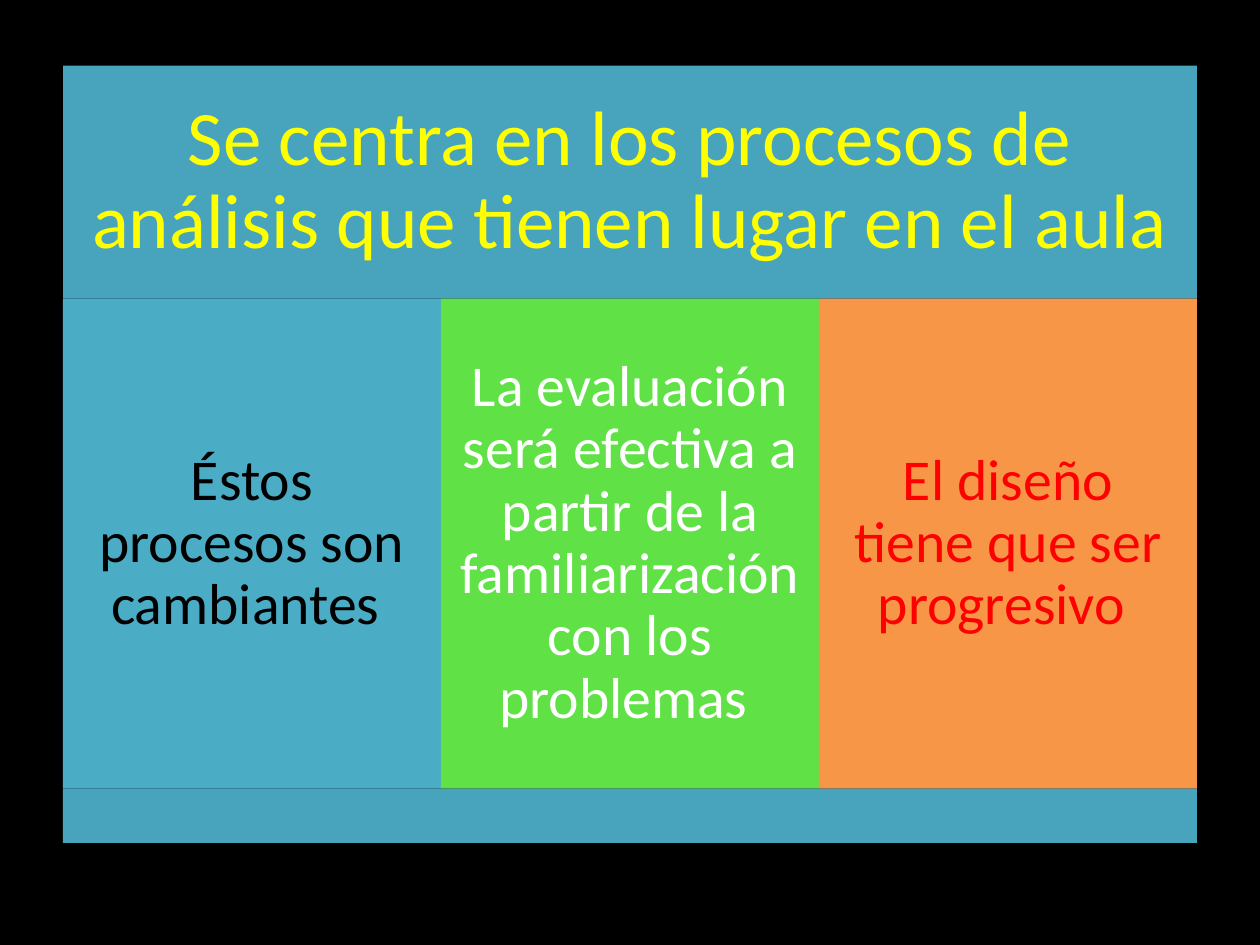
from dataclasses import dataclass

from pptx import Presentation
from pptx import util as u
from pptx.dml.color import RGBColor
from pptx.enum import shapes, text


@dataclass(frozen=True)
class Theme:
    font: str = "Calibri"
    title_size: int = 44
    body_size: int = 33
    background: str = "000000"
    band: str = "48A4BD"
    title: str = "FFFF00"


THEME = Theme()
TITLE = "Se centra en los procesos de análisis que tienen lugar en el aula "
COLUMNS = [
    ("Éstos procesos son cambiantes ", "4BACC6", "000000"),
    ("La evaluación será efectiva a partir de la familiarización con los problemas ",
     "60E146", "FFFFFF"),
    ("El diseño tiene que ser progresivo ", "F79646", "FF0000"),
]

WIDTH, HEIGHT = 10, 7.5
LEFT, TOP = 0.5, 0.52
GRID_WIDTH = WIDTH - 2 * LEFT
HEADER, BODY, FOOTER = 1.85, 3.89, 0.43
COLUMN = GRID_WIDTH / len(COLUMNS)


def place(s, left, top, width, height, color):
    s.left, s.top, s.width, s.height = map(u.Inches, (left, top, width, height))
    s.fill.solid()
    s.fill.fore_color.rgb = RGBColor.from_string(color)
    s.line.fill.background()


def add_block(slide, left, top, width, height, color):
    s = slide.shapes.add_shape(shapes.MSO_SHAPE.RECTANGLE, 0, 0, 0, 0)
    s.shadow.inherit = False
    place(s, left, top, width, height, color)
    return s


def write(s, words, size, color, inset):
    tf = s.text_frame
    tf.word_wrap = True
    tf.auto_size = text.MSO_AUTO_SIZE.NONE
    tf.vertical_anchor = text.MSO_ANCHOR.MIDDLE
    tf.margin_left = tf.margin_right = u.Inches(inset)
    tf.margin_top = tf.margin_bottom = u.Inches(inset)
    p = tf.paragraphs[0]
    p.alignment = text.PP_ALIGN.CENTER
    p.line_spacing = 0.9
    r = p.add_run()
    r.text = words
    r.font.name = THEME.font
    r.font.size = u.Pt(size)
    r.font.color.rgb = RGBColor.from_string(color)


def main():
    prs = Presentation()
    prs.slide_width, prs.slide_height = u.Inches(WIDTH), u.Inches(HEIGHT)
    slide = prs.slides.add_slide(prs.slide_layouts.get_by_name("Title Only"))
    slide.background.fill.solid()
    slide.background.fill.fore_color.rgb = RGBColor.from_string(THEME.background)

    title = slide.shapes.title
    place(title, LEFT, TOP, GRID_WIDTH, HEADER, THEME.band)
    write(title, TITLE, THEME.title_size, THEME.title, 0.18)

    for i, (words, fill, color) in enumerate(COLUMNS):
        s = add_block(slide, LEFT + i * COLUMN, TOP + HEADER, COLUMN, BODY, fill)
        write(s, words, THEME.body_size, color, 0.14)

    add_block(slide, LEFT, TOP + HEADER + BODY, GRID_WIDTH, FOOTER, THEME.band)
    prs.save("out.pptx")


if __name__ == "__main__":
    main()
